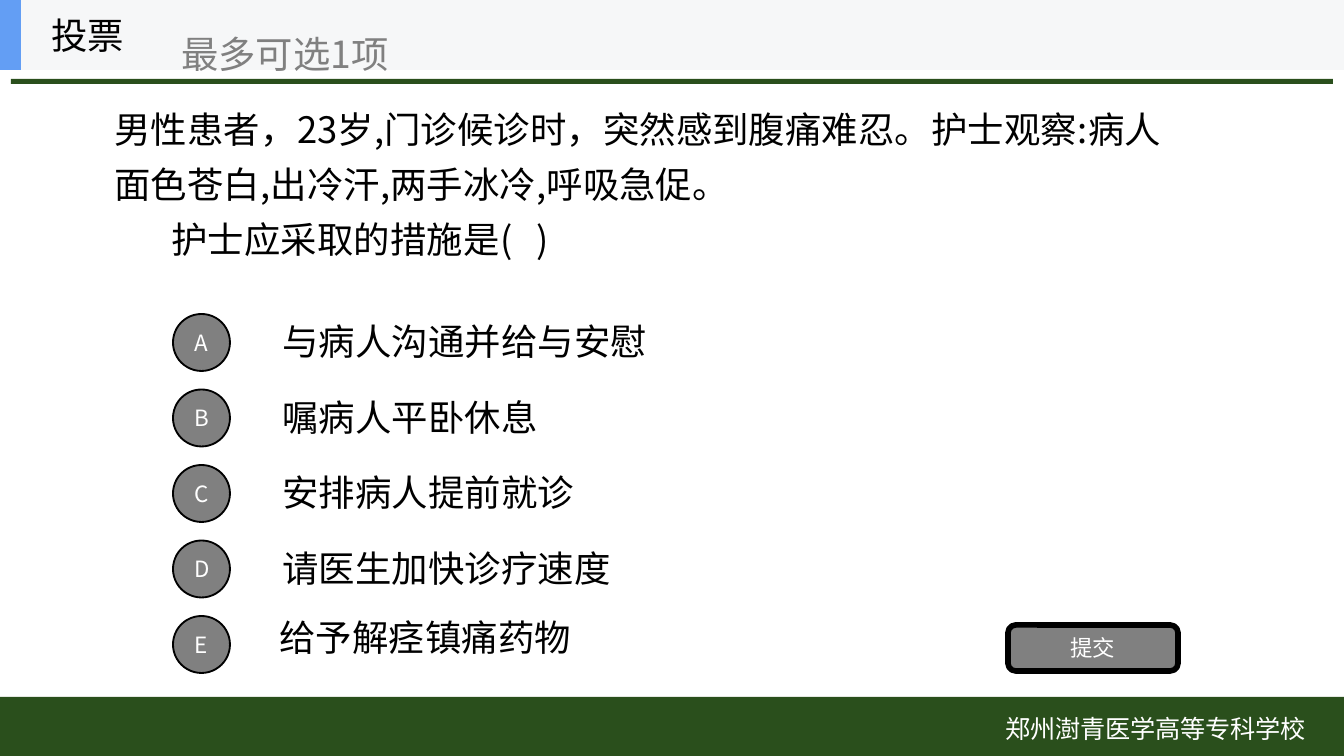
import pptx
import pptx.util
import pptx.dml.color
import pptx.enum.shapes
import pptx.enum.text
import pptx.oxml.ns
from lxml import etree

# Content
TITLE = "投票"
HINT = "最多可选1项"
QUESTION = [
    "男性患者，23岁,门诊候诊时，突然感到腹痛难忍。护士观察:病人面色苍白,出冷汗,两手冰冷,呼吸急促。",
    "护士应采取的措施是(   )",
]
# letter, answer, shift of the answer (x, y) from its row in px
OPTIONS = [
    ("A", "与病人沟通并给与安慰", (0, 0)),
    ("B", "嘱病人平卧休息", (0, 0)),
    ("C", "安排病人提前就诊", (0, 0)),
    ("D", "请医生加快诊疗速度", (0, 0)),
    ("E", "给予解痉镇痛药物", (-3, -6)),
]
SUBMIT = "提交"
SCHOOL = "郑州澍青医学高等专科学校"

# Style
FONT = "Noto Sans CJK SC"
COLORS = {"green": "2A4F1C", "blue": "639EF4", "header": "F6F7F8",
          "gray": "808080", "black": "000000", "white": "FFFFFF"}
WIDTH, HEIGHT = 1344, 756
FIRST_ROW, LAST_ROW = 314, 616
CIRCLE = 57

SHAPES = pptx.enum.shapes.MSO_SHAPE
ALIGN = pptx.enum.text.PP_ALIGN
ANCHOR = pptx.enum.text.MSO_ANCHOR
qn = pptx.oxml.ns.qn


def px(n):
    return pptx.util.Emu(round(n * 914400 / 134.4))


def color(name):
    return pptx.dml.color.RGBColor.from_string(COLORS[name])


def place(shape, box):
    shape.left, shape.top, shape.width, shape.height = map(px, box)


def write(shape, text, size, ink, align=ALIGN.LEFT, anchor=ANCHOR.MIDDLE):
    frame = shape.text_frame
    frame.text = text
    frame.word_wrap = True
    frame.auto_size = pptx.enum.text.MSO_AUTO_SIZE.NONE
    frame.vertical_anchor = anchor
    for paragraph in frame.paragraphs:
        paragraph.alignment = align
        for run in paragraph.runs:
            run.font.size = pptx.util.Pt(size)
            run.font.color.rgb = color(ink)
            run.font.name = FONT
            east_asian = etree.SubElement(run.font._element, qn("a:ea"))
            east_asian.set("typeface", FONT)


def add_shape(slide, kind, box, fill, line_width=0):
    shape = slide.shapes.add_shape(kind, *map(px, box))
    shape.shadow.inherit = False
    shape.fill.solid()
    shape.fill.fore_color.rgb = color(fill)
    if line_width:
        shape.line.color.rgb = color("black")
        shape.line.width = pptx.util.Pt(line_width)
    else:
        shape.line.fill.background()
    return shape


def add_label(slide, box, text, size, ink, anchor=ANCHOR.MIDDLE):
    label = slide.shapes.add_textbox(*map(px, box))
    write(label, text, size, ink, anchor=anchor)


def main():
    deck = pptx.Presentation()
    deck.slide_width, deck.slide_height = px(WIDTH), px(HEIGHT)
    slide = deck.slides.add_slide(deck.slide_layouts[1])
    title, question = slide.placeholders

    # Bars
    for box, fill in [
        ((11, 79, 1322, 5), "green"),
        ((0, 697, WIDTH, 59), "green"),
        ((0, 0, WIDTH, 70), "header"),
        ((0, 0, 21, 70), "blue"),
    ]:
        add_shape(slide, SHAPES.RECTANGLE, box, fill)

    # Header and footer text, title in front of its bar
    slide.shapes._spTree.append(title._element)
    place(title, (38, 0, 210, 70))
    write(title, TITLE, 19.5, "black")
    add_label(slide, (168, 16, 336, 75), HINT, 20, "gray")
    add_label(slide, (992, 707, 352, 44), SCHOOL, 13.5, "white", ANCHOR.TOP)

    # Question
    place(question, (101, 60, 1075, 237))
    write(question, "\n".join(QUESTION), 19.5, "black")
    for paragraph, indent in zip(question.text_frame.paragraphs, (0, 57)):
        paragraph.line_spacing = 1.25
        paragraph.space_before = pptx.util.Pt(0)
        properties = paragraph._p.get_or_add_pPr()
        properties.set("marL", "0")
        properties.set("indent", str(px(indent)))
        etree.SubElement(properties, qn("a:buNone"))

    # Options
    pitch = (LAST_ROW - FIRST_ROW) / (len(OPTIONS) - 1)
    for row, (letter, answer, (dx, dy)) in enumerate(OPTIONS):
        top = FIRST_ROW + row * pitch
        circle = add_shape(slide, SHAPES.OVAL, (173, top, CIRCLE, CIRCLE), "gray", 1)
        write(circle, letter, 12, "white", ALIGN.CENTER)
        add_label(slide, (269 + dx, top - 8 + dy, 941, 71), answer, 19.5, "black")

    # Submit button
    button = add_shape(slide, SHAPES.ROUNDED_RECTANGLE, (1008, 625, 170, 46), "gray", 3)
    write(button, SUBMIT, 12, "white", ALIGN.CENTER)

    deck.save("out.pptx")


if __name__ == "__main__":
    main()
